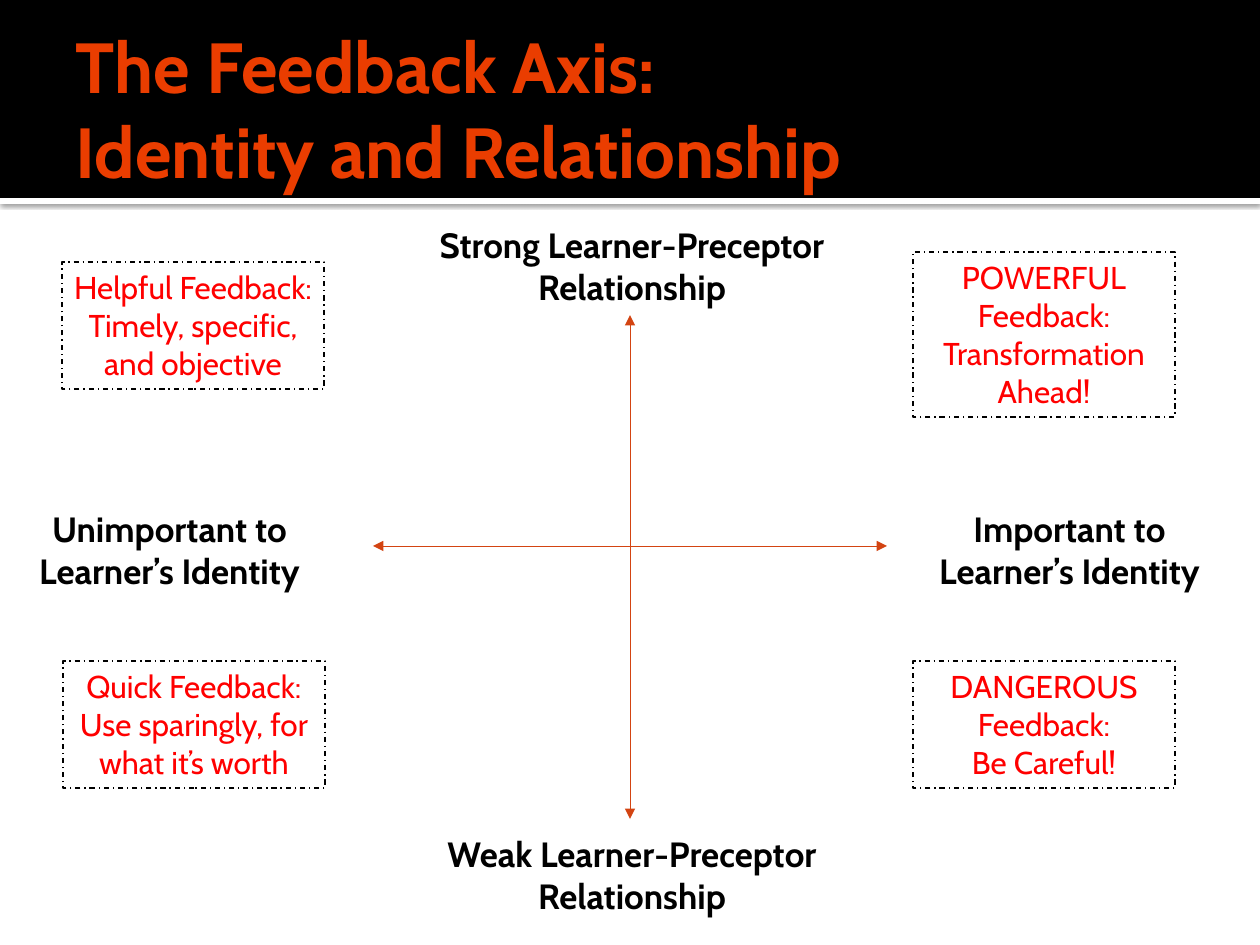
from lxml import etree
from pptx import Presentation
from pptx.dml.color import RGBColor
from pptx.enum.dml import MSO_LINE
from pptx.enum.shapes import MSO_CONNECTOR, MSO_SHAPE
from pptx.enum.text import MSO_ANCHOR, MSO_AUTO_SIZE, PP_ALIGN
from pptx.oxml.ns import qn
from pptx.util import Pt

PX = 914400 / 126
FONT = "Cabin"
BLACK = RGBColor(0, 0, 0)
WHITE = RGBColor(255, 255, 255)
RED = RGBColor(255, 0, 0)
ORANGE = RGBColor(0xEA, 0x3D, 0x00)
RUST = RGBColor(0xD3, 0x44, 0x12)
RECT = MSO_SHAPE.RECTANGLE
LINE = MSO_CONNECTOR.STRAIGHT
DASH = MSO_LINE.DASH_DOT
LEFT, CENTER = PP_ALIGN.LEFT, PP_ALIGN.CENTER
TOP, MIDDLE = MSO_ANCHOR.TOP, MSO_ANCHOR.MIDDLE
GROW, FIXED = MSO_AUTO_SIZE.SHAPE_TO_FIT_TEXT, MSO_AUTO_SIZE.NONE


def emu(*sizes):
    return [round(s * PX) for s in sizes]


def write(shape, text, size=20, color=BLACK, bold=True, align=CENTER,
          anchor=TOP, fit=GROW, inset=13):
    frame = shape.text_frame
    frame.text = text
    frame.word_wrap = True
    frame.auto_size = fit
    frame.vertical_anchor = anchor
    frame.margin_left, frame.margin_right = emu(inset, inset)
    for para in frame.paragraphs:
        para.alignment = align
        for run in para.runs:
            font = run.font
            font.name, font.size, font.bold = FONT, Pt(size), bold
            font.color.rgb = color


prs = Presentation()
prs.slide_width, prs.slide_height = emu(1260, 945)
slide = prs.slides.add_slide(prs.slide_layouts[6])
shapes = slide.shapes

# Header band, with a white rule below it that casts a soft shadow
for top, high, color in [(198, 6, WHITE), (0, 198, BLACK)]:
    band = shapes.add_shape(RECT, *emu(0, top, 1260, high))
    band.shadow.inherit = False
    band.fill.solid()
    band.fill.fore_color.rgb = color
    band.line.fill.background()
    if color == WHITE:
        effects = band._element.spPr.find(qn("a:effectLst"))
        shade = etree.SubElement(effects, qn("a:outerShdw"), blurRad="31750",
                                 dist="10160", dir="5400000", algn="t",
                                 rotWithShape="0")
        tint = etree.SubElement(shade, qn("a:srgbClr"), val="000000")
        etree.SubElement(tint, qn("a:alpha"), val="60000")

title = shapes.add_textbox(*emu(63, 21, 1134, 173))
write(title, "The Feedback Axis:\vIdentity and Relationship", size=40.5,
      color=ORANGE, align=LEFT, anchor=MIDDLE, fit=FIXED)

# Axes
for ends in [(630, 315, 630, 819), (373, 546, 887, 546)]:
    axis = shapes.add_connector(LINE, *emu(*ends))
    axis.line.color.rgb = RUST
    axis.line.width = Pt(0.5)
    for end in ("a:headEnd", "a:tailEnd"):
        etree.SubElement(axis.line._ln, qn(end), type="triangle")
    etree.SubElement(axis._element.spPr, qn("a:effectLst"))

# Labels at the ends of the axes
labels = [
    (414, 217, 436, "Strong Learner-Preceptor Relationship"),
    (414, 826, 436, "Weak Learner-Preceptor Relationship"),
    (914, 501, 311, "Important to Learner’s Identity"),
    (14, 501, 311, "Unimportant to Learner’s Identity"),
]
for left, top, wide, text in labels:
    write(shapes.add_textbox(*emu(left, top, wide, 97)), text)

# Feedback kinds, one in each quadrant
kinds = [
    (913, 252, 165, "POWERFUL Feedback: Transformation Ahead!"),
    (913, 661, 127, "DANGEROUS Feedback:\nBe Careful!"),
    (62, 262, 127, "Helpful Feedback:\nTimely, specific, and objective"),
    (63, 661, 127, "Quick Feedback:\nUse sparingly, for what it’s worth"),
]
for left, top, high, text in kinds:
    box = shapes.add_shape(RECT, *emu(left, top, 262, high))
    box.shadow.inherit = False
    box.fill.background()
    box.line.color.rgb = BLACK
    box.line.width = Pt(0.75)
    box.line.dash_style = DASH
    write(box, text, size=18, color=RED, bold=False, inset=10)

prs.save("out.pptx")
